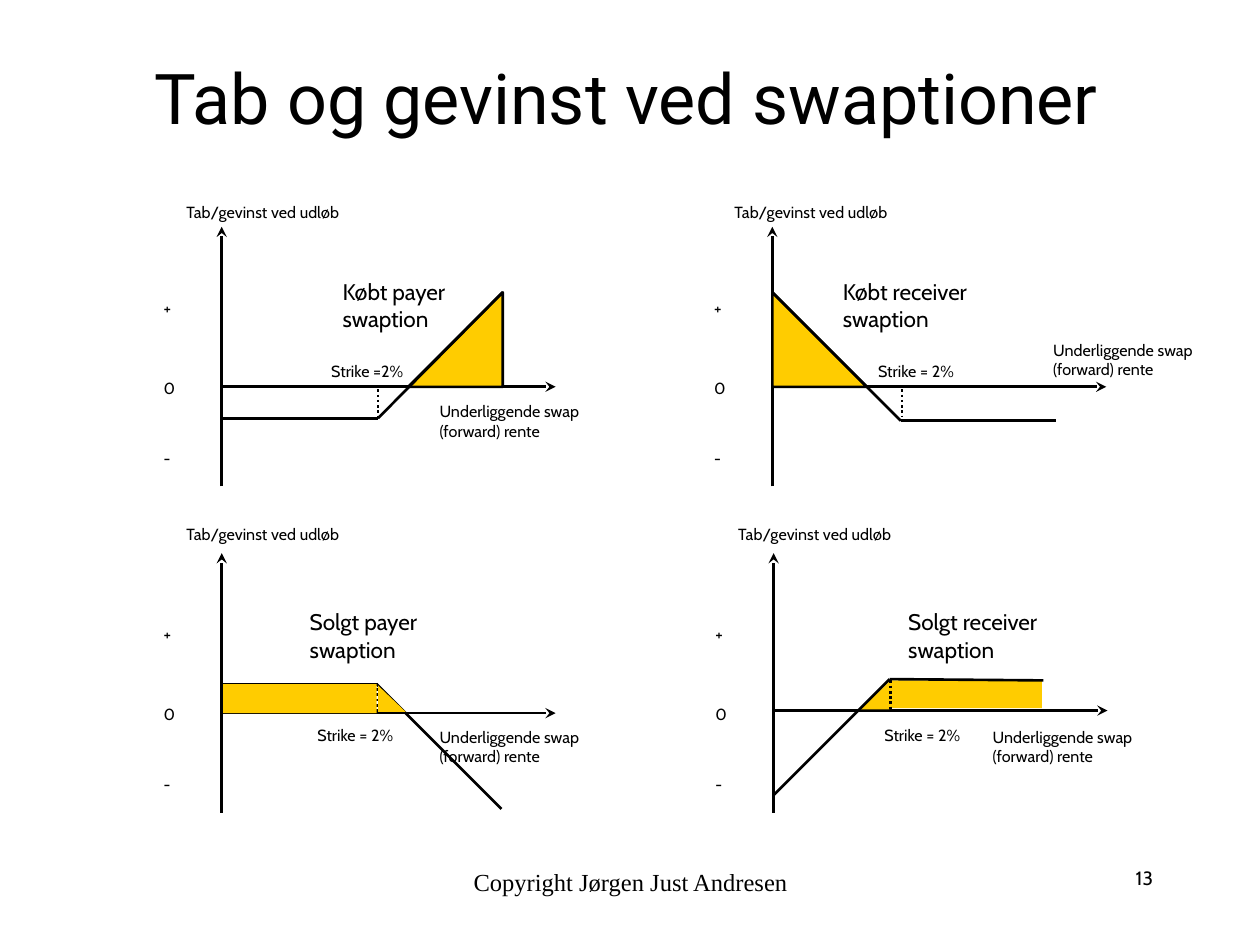
from dataclasses import dataclass
from itertools import pairwise

from pptx import Presentation
from pptx.dml.color import RGBColor
from pptx.enum.dml import MSO_LINE_DASH_STYLE as Dash
from pptx.enum.shapes import MSO_CONNECTOR_TYPE as Connector, MSO_SHAPE as Shape
from pptx.enum.text import MSO_ANCHOR as Anchor, PP_ALIGN as Align
from pptx.oxml.ns import qn
from pptx.oxml.xmlchemy import OxmlElement
from pptx.util import Inches, Pt


@dataclass(frozen=True)
class Theme:
    ink: RGBColor = RGBColor(0, 0, 0)
    gain: RGBColor = RGBColor(0xFF, 0xCC, 0x00)
    title_font: str = "Roboto"
    label_font: str = "Cabin"
    footer_font: str = "Times New Roman"
    title_size: float = 40
    name_size: float = 12.9
    label_size: float = 9.2
    number_size: float = 11
    footer_size: float = 14
    line_width: float = 1.5


@dataclass(frozen=True)
class Panel:
    name: str
    name_at: tuple
    axis_label_at: tuple
    rate_label_at: tuple
    strike_text: str
    strike_at: tuple
    origin: tuple          # where the two axes meet
    top: float             # arrow end of the vertical axis
    payoff: tuple          # corner points of the payoff line
    strike_line: tuple     # x, top, bottom
    gains: tuple           # shape, left, top, width, height, mirrored
    outlined: bool = False
    gains_in_front: bool = False


THEME = Theme()
AXIS_LENGTH = 2.65
AXIS_HEIGHT = 2.06
SIGNS = (("+", 0.52), ("0", 1.15), ("-", 1.71))  # text, distance below axis top

PANELS = (
    Panel("Købt payer swaption", (2.62, 2.16), (1.38, 1.56), (3.39, 3.14),
          "Strike =2%", (2.53, 2.82), (1.76, 3.07), 1.8,
          ((1.77, 3.32), (3, 3.32), (3.99, 2.32)), (3, 3.09, 3.31),
          ((Shape.RIGHT_TRIANGLE, 3.24, 2.32, 0.75, 0.75, True),), outlined=True),
    Panel("Købt receiver swaption", (6.59, 2.16), (5.73, 1.56), (8.26, 2.65),
          "Strike = 2%", (6.87, 2.82), (6.13, 3.07), 1.8,
          ((6.13, 2.32), (7.15, 3.34), (8.38, 3.34)), (7.16, 3.09, 3.31),
          ((Shape.RIGHT_TRIANGLE, 6.13, 2.32, 0.75, 0.75, False),), outlined=True),
    Panel("Solgt payer swaption", (2.36, 4.78), (1.38, 4.11), (3.39, 5.72),
          "Strike = 2%", (2.42, 5.71), (1.76, 5.66), 4.39,
          ((1.77, 5.43), (2.99, 5.43), (3.98, 6.42)), (2.99, 5.42, 5.65),
          ((Shape.RECTANGLE, 1.77, 5.43, 1.22, 0.23, False),
           (Shape.RIGHT_TRIANGLE, 3, 5.44, 0.22, 0.21, False)), gains_in_front=True),
    Panel("Solgt receiver swaption", (7.11, 4.78), (5.76, 4.11), (7.78, 5.72),
          "Strike = 2%", (6.92, 5.71), (6.14, 5.64), 4.39,
          ((6.14, 6.31), (7.06, 5.39), (8.28, 5.4)), (7.07, 5.4, 5.65),
          ((Shape.RECTANGLE, 7.05, 5.4, 1.22, 0.22, False),
           (Shape.RIGHT_TRIANGLE, 6.83, 5.41, 0.23, 0.22, True))),
)


def add_text(page, text, at, size, *, points=THEME.label_size, font=THEME.label_font,
             align=Align.LEFT, anchor=Anchor.TOP):
    box = page.shapes.add_textbox(*map(Inches, (*at, *size)))
    frame = box.text_frame
    frame.word_wrap = True
    frame.vertical_anchor = anchor
    para = frame.paragraphs[0]
    para.alignment = align
    span = para.add_run()
    span.text = text
    span.font.name = font
    span.font.size = Pt(points)
    span.font.color.rgb = THEME.ink


def add_line(page, start, end, *, dash=None, arrow=False):
    line = page.shapes.add_connector(Connector.STRAIGHT, *map(Inches, (*start, *end)))
    line.line.color.rgb = THEME.ink
    line.line.width = Pt(THEME.line_width)
    if dash:
        line.line.dash_style = dash
    properties = line._element.spPr
    if arrow:
        head = OxmlElement("a:tailEnd")
        head.set("type", "stealth")
        properties.find(qn("a:ln")).append(head)
    properties.append(OxmlElement("a:effectLst"))


def add_gains(page, panel):
    for kind, left, top, width, height, mirrored in panel.gains:
        area = page.shapes.add_shape(kind, *map(Inches, (left, top, width, height)))
        area.shadow.inherit = False
        area.fill.solid()
        area.fill.fore_color.rgb = THEME.gain
        if panel.outlined:
            area.line.color.rgb = THEME.ink
            area.line.width = Pt(THEME.line_width)
        else:
            area.line.fill.background()
        if mirrored:
            area._element.spPr.find(qn("a:xfrm")).set("flipH", "1")


def add_panel(page, panel):
    x, zero = panel.origin

    # Axes
    add_line(page, (x, panel.top + AXIS_HEIGHT), (x, panel.top), arrow=True)
    add_line(page, (x, zero), (x + AXIS_LENGTH, zero), arrow=True)

    # Payoff, strike and gain area
    if not panel.gains_in_front:
        add_gains(page, panel)
    for start, end in pairwise(panel.payoff):
        add_line(page, start, end)
    strike, upper, lower = panel.strike_line
    add_line(page, (strike, upper), (strike, lower), dash=Dash.ROUND_DOT)
    if panel.gains_in_front:
        add_gains(page, panel)

    # Labels
    for sign, drop in SIGNS:
        add_text(page, sign, (x - 0.56, panel.top + drop), (0.35, 0.25))
    add_text(page, "Tab/gevinst ved udløb", panel.axis_label_at, (2.28, 0.25))
    add_text(page, "Underliggende swap (forward) rente", panel.rate_label_at, (1.58, 0.25))
    add_text(page, panel.strike_text, panel.strike_at, (0.98, 0.26))
    add_text(page, panel.name, panel.name_at, (1.35, 0.33), points=THEME.name_size)


def main():
    deck = Presentation()
    deck.slide_width, deck.slide_height = Inches(10), Inches(7.5)
    page = deck.slides.add_slide(deck.slide_layouts[6])

    # Title
    add_text(page, "Tab og gevinst ved swaptioner", (0.72, 0.14), (8.5, 1.25),
             points=THEME.title_size, font=THEME.title_font,
             align=Align.CENTER, anchor=Anchor.MIDDLE)

    # Payoff diagrams
    for panel in PANELS:
        add_panel(page, panel)

    # Footer
    add_text(page, "Copyright Jørgen Just Andresen", (3.42, 6.83), (3.17, 0.5),
             points=THEME.footer_size, font=THEME.footer_font, align=Align.CENTER)
    add_text(page, "13", (7.17, 6.83), (2.08, 0.5),
             points=THEME.number_size, align=Align.RIGHT)

    deck.save("out.pptx")


if __name__ == "__main__":
    main()
